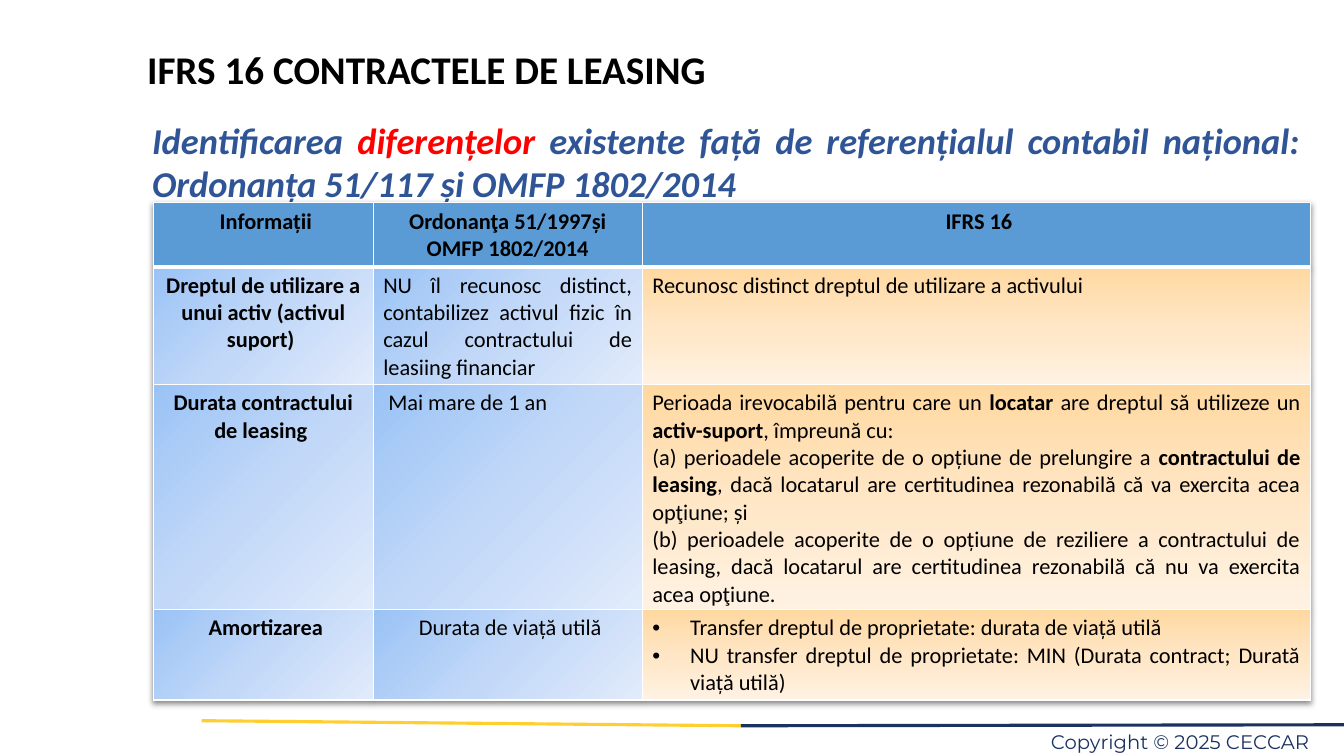
from lxml import etree
from pptx import Presentation
from pptx.dml.color import RGBColor
from pptx.enum import shapes, text
from pptx.oxml import ns
from pptx.util import Pt

BLACK = RGBColor(0x00, 0x00, 0x00)
WHITE = RGBColor(0xFF, 0xFF, 0xFF)
RED = RGBColor(0xFF, 0x00, 0x00)
BLUE = RGBColor(0x2F, 0x55, 0x97)
NAVY = RGBColor(0x1B, 0x32, 0x60)
YELLOW = RGBColor(0xFF, 0xCE, 0x31)
HEADER_BLUE = RGBColor(0x5B, 0x9B, 0xD5)
BLUE_FADE = (RGBColor(0x9A, 0xC3, 0xF5), RGBColor(0xC2, 0xD8, 0xF8), RGBColor(0xE1, 0xEB, 0xFB))
ORANGE_FADE = (RGBColor(0xFF, 0xD8, 0xA0), RGBColor(0xFF, 0xE6, 0xC5), RGBColor(0xFF, 0xF2, 0xE3))

CENTER = text.PP_ALIGN.CENTER
JUSTIFY = text.PP_ALIGN.JUSTIFY
RIGHT = text.PP_ALIGN.RIGHT

COLUMN_WIDTHS = (157, 192.2, 477.4)
ROW_HEIGHTS = (39.6, 72, 136.8, 62.6)
HEADINGS = (" Informații", "Ordonanţa 51/1997și OMFP 1802/2014", " IFRS 16")
COMPARISON = (
    ("Dreptul de utilizare a unui activ (activul suport) ",
     "NU îl recunosc distinct, contabilizez activul fizic în cazul contractului de leasiing financiar",
     ("Recunosc distinct dreptul de utilizare a activului",)),
    ("Durata contractului de leasing ",
     " Mai mare de 1 an",
     ("Perioada irevocabilă pentru care un *locatar *are dreptul să utilizeze un *activ-suport*, împreună cu:",
      "(a) perioadele acoperite de o opțiune de prelungire a *contractului de leasing*, "
      "dacă locatarul are certitudinea rezonabilă că va exercita acea opţiune; și",
      "(b) perioadele acoperite de o opțiune de reziliere a contractului de leasing, "
      "dacă locatarul are certitudinea rezonabilă că nu va exercita acea opţiune.")),
    (" Amortizarea",
     " Durata de viață utilă",
     ("• Transfer dreptul de proprietate: durata de viață utilă",
      "• NU transfer dreptul de proprietate: MIN (Durata contract; Durată viață utilă)")),
)


def add_element(parent, tag, **attributes):
    return etree.SubElement(parent, ns.qn(tag), attributes)


def add_span(para, words, size, color, bold=False, italic=False, font="Calibri"):
    span = para.add_run()
    span.text = words
    span.font.name = font
    span.font.size = Pt(size)
    span.font.color.rgb = color
    span.font.bold = bold
    span.font.italic = italic


def add_box(page, left, top, width, height, align, margins=True):
    box = page.shapes.add_textbox(Pt(left), Pt(top), Pt(width), Pt(height))
    frame = box.text_frame
    frame.word_wrap = True
    if not margins:
        frame.margin_left = frame.margin_right = frame.margin_top = frame.margin_bottom = 0
    para = frame.paragraphs[0]
    para.alignment = align
    return para


def add_rule(page, start, end, color):
    rule = page.shapes.add_connector(
        shapes.MSO_CONNECTOR.STRAIGHT, *(Pt(value) for value in start + end))
    rule.line.color.rgb = color
    rule.line.width = Pt(2.25)
    add_element(rule._element.spPr, "a:effectLst")


def add_bullet(para):
    properties = para._p.get_or_add_pPr()
    properties.set("marL", str(Pt(27)))
    properties.set("indent", str(-Pt(27)))
    add_element(properties, "a:buFont", typeface="Arial")
    add_element(properties, "a:buChar", char="•")


def set_borders(cell, bottom):
    properties = cell._tc.get_or_add_tcPr()
    for side, width in (("L", 1), ("R", 1), ("T", 1), ("B", bottom)):
        line = add_element(properties, f"a:ln{side}", w=str(Pt(width)))
        fill = add_element(line, "a:solidFill")
        add_element(fill, "a:srgbClr", val=str(WHITE))


def set_fade(cell, colors, angle):
    fade = add_element(cell._tc.get_or_add_tcPr(), "a:gradFill", rotWithShape="1")
    stops = add_element(fade, "a:gsLst")
    for index, color in enumerate(colors):
        stop = add_element(stops, "a:gs", pos=str(index * 50000))
        add_element(stop, "a:srgbClr", val=str(color))
    add_element(fade, "a:lin", ang=str(angle * 60000), scaled="0")


def write_cell(cell, paragraphs, align, bold=False):
    frame = cell.text_frame
    for index, words in enumerate(paragraphs):
        para = frame.add_paragraph() if index else frame.paragraphs[0]
        para.alignment = align
        if words.startswith("• "):
            add_bullet(para)
            words = words[2:]
        for position, part in enumerate(words.split("*")):
            add_span(para, part, 16, BLACK, bold or position % 2 == 1)


def add_table_shadow(table):
    effects = etree.Element(ns.qn("a:effectLst"))
    shadow = add_element(effects, "a:outerShdw", blurRad=str(Pt(4)), dist=str(Pt(2)),
                         dir="5400000", algn="t", rotWithShape="0")
    color = add_element(shadow, "a:srgbClr", val=str(BLACK))
    add_element(color, "a:alpha", val="50000")
    table._tbl.tblPr.insert(0, effects)


def add_comparison(page):
    table = page.shapes.add_table(
        len(ROW_HEIGHTS), len(COLUMN_WIDTHS), Pt(109.6), Pt(144.9),
        Pt(sum(COLUMN_WIDTHS)), Pt(sum(ROW_HEIGHTS))).table
    table.horz_banding = False
    add_table_shadow(table)
    for column, width in zip(table.columns, COLUMN_WIDTHS):
        column.width = Pt(width)
    for row, height in zip(table.rows, ROW_HEIGHTS):
        row.height = Pt(height)
    for column, heading in enumerate(HEADINGS):
        cell = table.cell(0, column)
        set_borders(cell, 3)
        cell.fill.solid()
        cell.fill.fore_color.rgb = HEADER_BLUE
        write_cell(cell, [heading], CENTER, bold=True)
    for row, (topic, national, standard) in enumerate(COMPARISON, 1):
        cells = [table.cell(row, column) for column in range(len(COLUMN_WIDTHS))]
        for cell in cells:
            set_borders(cell, 1)
        for cell in cells[:2]:
            set_fade(cell, BLUE_FADE, 45)
        set_fade(cells[2], ORANGE_FADE, 90)
        write_cell(cells[0], [topic], CENTER, bold=True)
        write_cell(cells[1], [national], CENTER if row == len(COMPARISON) else JUSTIFY)
        write_cell(cells[2], standard, JUSTIFY)


def main():
    deck = Presentation()
    deck.slide_width = Pt(960)
    deck.slide_height = Pt(540)
    page = deck.slides.add_slide(deck.slide_layouts[6])

    add_rule(page, (144, 514.8), (529.2, 518.4), YELLOW)
    add_rule(page, (529.2, 518.4), (960, 517.7), NAVY)
    footer = add_box(page, 655.9, 517.7, 283, 19.4, RIGHT, margins=False)
    footer.line_spacing = Pt(20.5)
    add_span(footer, "Copyright © 2025 CECCAR ", 14, NAVY, font="Montserrat")

    subtitle = add_box(page, 101.5, 80.6, 834.5, 70, JUSTIFY)
    for words, color in (
            ("Identificarea ", BLUE),
            ("diferențelor", RED),
            (" existente față de referențialul contabil național: Ordonanța 51/117 și OMFP 1802/2014", BLUE)):
        add_span(subtitle, words, 26, color, bold=True, italic=True)

    title = add_box(page, 0, 32.4, 609.1, 64, CENTER)
    title.line_spacing = 0.9
    add_span(title, "IFRS 16 CONTRACTELE DE LEASING", 28, BLACK, bold=True)

    add_comparison(page)
    deck.save("out.pptx")


if __name__ == "__main__":
    main()
